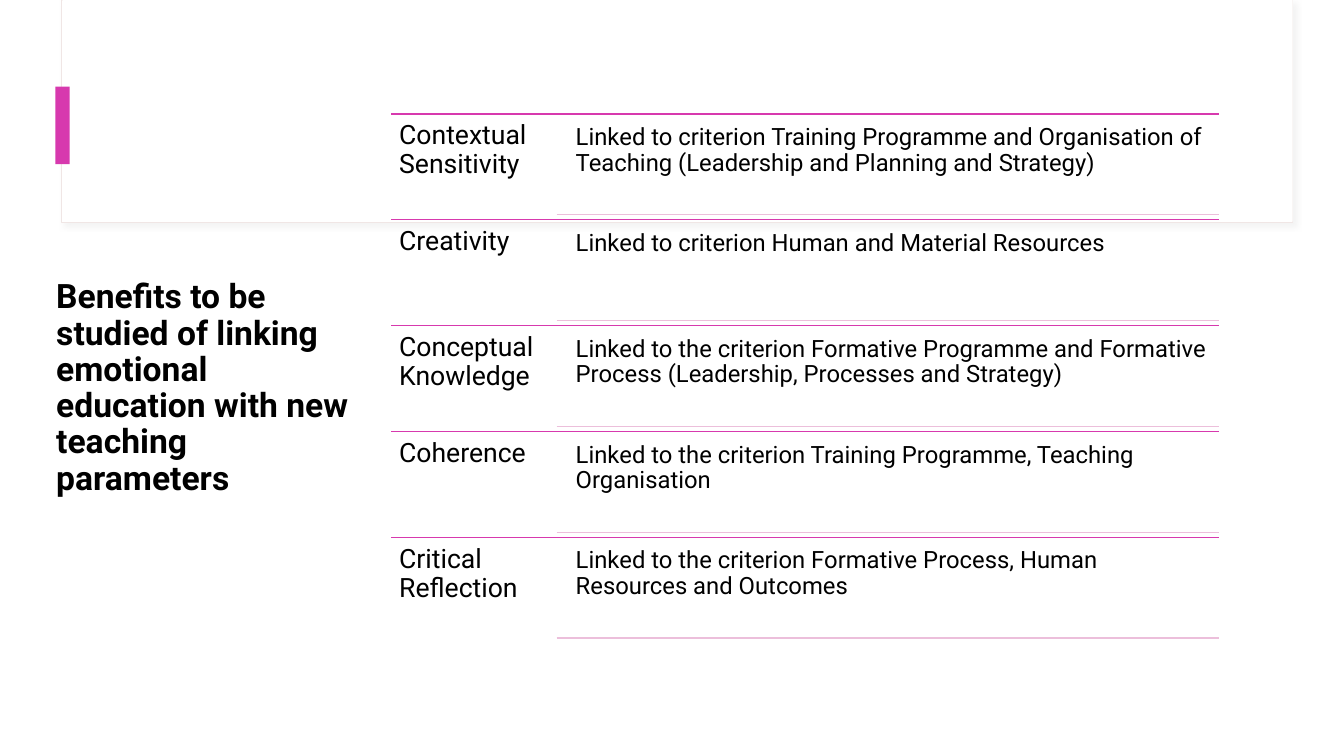
from lxml.etree import SubElement
from pptx import Presentation
from pptx.dml.color import RGBColor
from pptx.enum.shapes import MSO_CONNECTOR as CONN, MSO_SHAPE as SHAPE
from pptx.enum.text import MSO_ANCHOR as ANCHOR
from pptx.oxml import parse_xml
from pptx.oxml.ns import nsdecls, qn
from pptx.util import Pt

PX = 9144
WHITE = RGBColor(0xFF, 0xFF, 0xFF)
BLACK = RGBColor(0, 0, 0)
MAGENTA = RGBColor(0xD7, 0x39, 0xAE)
PALE_PINK = RGBColor(0xEC, 0xBF, 0xDB)
FRAME = RGBColor(0xF0, 0xE6, 0xE5)
SHADOW = RGBColor(0xD9, 0xD9, 0xD9)

TITLE = "Benefits to be studied of linking emotional education with new teaching parameters"
BENEFITS = [
    ("Contextual Sensitivity",
     "Linked to criterion Training Programme and Organisation of Teaching (Leadership and Planning and Strategy)"),
    ("Creativity", "Linked to criterion Human and Material Resources"),
    ("Conceptual Knowledge",
     "Linked to the criterion Formative Programme and Formative Process (Leadership, Processes and Strategy)"),
    ("Coherence", "Linked to the criterion Training Programme, Teaching Organisation"),
    ("Critical Reflection", "Linked to the criterion Formative Process, Human Resources and Outcomes"),
]


class Deck:
    font = "Roboto"

    def __init__(self, width, height):
        self.prs = Presentation()
        self.prs.slide_width = width * PX
        self.prs.slide_height = height * PX
        self.s = self.prs.slides.add_slide(self.prs.slide_layouts[6])

    def rect(self, x, y, w, h, fill, line=None, shadow=None):
        sp = self.s.shapes.add_shape(SHAPE.RECTANGLE, x * PX, y * PX, w * PX, h * PX)
        sp.shadow.inherit = False
        sp.fill.solid()
        sp.fill.fore_color.rgb = fill
        if line is None:
            sp.line.fill.background()
        else:
            sp.line.color.rgb = line
            sp.line.width = Pt(0.75)
        if shadow is not None:
            effects = sp._element.spPr.find(qn("a:effectLst"))
            effects.append(parse_xml(
                f'<a:outerShdw {nsdecls("a")} blurRad="{Pt(4)}" dist="{Pt(3)}" dir="2700000" '
                f'algn="tl" rotWithShape="0"><a:srgbClr val="{shadow}">'
                '<a:alpha val="30000"/></a:srgbClr></a:outerShdw>'))

    def rule(self, x1, x2, y, color):
        c = self.s.shapes.add_connector(CONN.STRAIGHT, x1 * PX, y * PX, x2 * PX, y * PX)
        c.line.color.rgb = color
        c.line.width = Pt(1)
        SubElement(c._element.spPr, qn("a:effectLst"))

    def text(self, text, x, y, w, h, *, size, bold=False, inset=(10, 5),
             anchor=ANCHOR.TOP):
        tf = self.s.shapes.add_textbox(x * PX, y * PX, w * PX, h * PX).text_frame
        tf.word_wrap = True
        tf.vertical_anchor = anchor
        tf.margin_left = tf.margin_right = inset[0] * PX
        tf.margin_top = tf.margin_bottom = inset[1] * PX
        p = tf.paragraphs[0]
        p.line_spacing = 0.9
        r = p.add_run()
        r.text = text
        r.font.name = self.font
        r.font.size = Pt(size)
        r.font.bold = bold
        r.font.color.rgb = BLACK


def main():
    d = Deck(1333, 750)
    d.rect(61, 0, 1221, 221, WHITE, line=FRAME, shadow=SHADOW)
    d.rect(62, 0, 1220, 220, WHITE)
    d.rect(55, 86, 14, 77, MAGENTA)
    d.text(TITLE, 46, 321, 310, 129, size=24, bold=True, anchor=ANCHOR.MIDDLE)

    top, pitch = 113, 105
    left, middle, right = 388, 552, 1209
    for i, (name, link) in enumerate(BENEFITS):
        y = top + i * pitch
        d.rule(left, right, y, MAGENTA)
        d.text(name, left, y, middle - left, pitch, size=19, inset=(8, 8))
        d.text(link, middle + 12, y + 4, 644, 95, size=17, inset=(7, 7))
        d.rule(middle, right, y + 100, PALE_PINK)

    d.prs.save("out.pptx")


if __name__ == "__main__":
    main()
